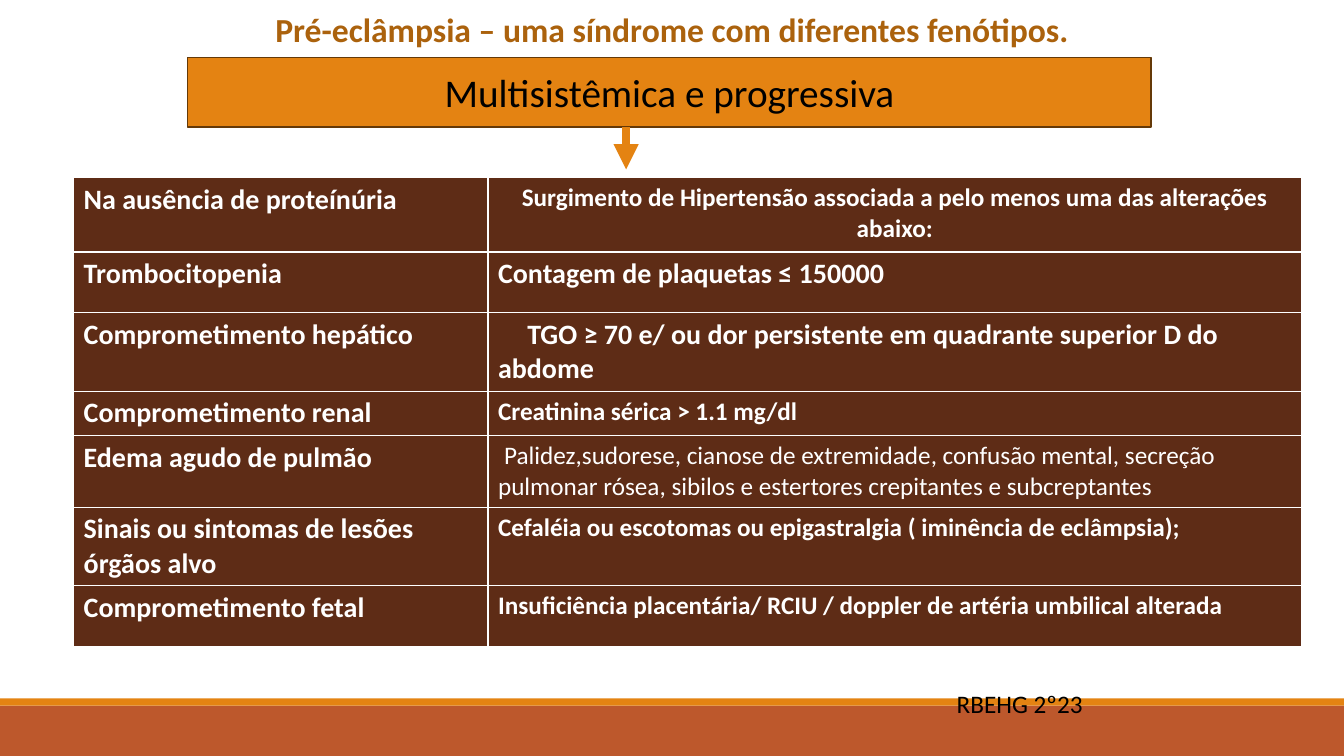
import pptx
import pptx.dml.color
import pptx.enum.shapes
import pptx.enum.text
import pptx.oxml
import pptx.oxml.ns
import pptx.util

ALIGN = pptx.enum.text.PP_ALIGN
PX = 9144  # 100 px to the inch
BLACK, WHITE = "000000", "FFFFFF"
ORANGE, RUST, BROWN = "E48312", "BD582C", "5E2C16"

# Sign, finding, its size, bold, alignment, first-line indent, row height
ROWS = [
    ("Na ausência de proteínúria",
     "Surgimento de Hipertensão associada a pelo menos uma das alterações abaixo:",
     18, True, ALIGN.CENTER, 0, 74),
    ("Trombocitopenia", "Contagem de plaquetas ≤ 150000",
     20, True, ALIGN.LEFT, 0, 60),
    ("Comprometimento hepático",
     "TGO ≥ 70 e/ ou dor persistente em quadrante superior D do abdome",
     20, True, ALIGN.LEFT, 29, 78),
    ("Comprometimento renal", "Creatinina sérica > 1.1 mg/dl",
     18, True, ALIGN.LEFT, 0, 44),
    ("Edema agudo de pulmão",
     "Palidez,sudorese, cianose de extremidade, confusão mental, secreção "
     "pulmonar rósea, sibilos e estertores crepitantes e subcreptantes",
     18, False, ALIGN.LEFT, 6, 71),
    ("Sinais ou sintomas de lesões órgãos alvo",
     "Cefaléia ou escotomas ou epigastralgia ( iminência de eclâmpsia);",
     18, True, ALIGN.LEFT, 0, 78),
    ("Comprometimento fetal",
     "Insuficiência placentária/ RCIU / doppler de artéria umbilical alterada",
     18, True, ALIGN.LEFT, 0, 60),
]


def color(code):
    return pptx.dml.color.RGBColor.from_string(code)


def scale(*sizes):
    return [size * PX for size in sizes]


class Deck:
    """Holds the font and the current slide; lengths are in px."""

    def __init__(self, wide, high, font):
        self.file = pptx.Presentation()
        self.file.slide_width, self.file.slide_height = scale(wide, high)
        self.font = font
        self.slide = self.file.slides.add_slide(self.file.slide_layouts[6])

    def words(self, frame, text, size, ink, bold=False, align=ALIGN.LEFT, indent=0):
        para = frame.paragraphs[0]
        para.text = text
        para.alignment = align
        para.font.name = self.font
        para.font.size = pptx.util.Pt(size)
        para.font.bold = bold
        para.font.color.rgb = color(ink)
        if indent:
            props = para._p.get_or_add_pPr()
            props.set("marL", "0")
            props.set("indent", str(indent * PX))

    def box(self, place, fill, line=None, text="", **style):
        shape = self.slide.shapes.add_shape(
            pptx.enum.shapes.MSO_SHAPE.RECTANGLE, *scale(*place))
        shape.shadow.inherit = False
        shape.fill.solid()
        shape.fill.fore_color.rgb = color(fill)
        if line:
            shape.line.color.rgb = color(line)
            shape.line.width = pptx.util.Pt(1.25)
        else:
            shape.line.fill.background()
        if text:
            shape.text_frame.vertical_anchor = pptx.enum.text.MSO_ANCHOR.MIDDLE
            self.words(shape.text_frame, text, align=ALIGN.CENTER, **style)

    def label(self, place, text, **style):
        frame = self.slide.shapes.add_textbox(*scale(*place)).text_frame
        frame.word_wrap = False
        frame.auto_size = pptx.enum.text.MSO_AUTO_SIZE.SHAPE_TO_FIT_TEXT
        self.words(frame, text, **style)

    def arrow(self, ends, ink, width):
        line = self.slide.shapes.add_connector(
            pptx.enum.shapes.MSO_CONNECTOR.STRAIGHT, *scale(*ends))
        line.line.color.rgb = color(ink)
        line.line.width = pptx.util.Pt(width)
        space = pptx.oxml.ns.nsdecls("a")
        props = line._element.spPr
        props.find(pptx.oxml.ns.qn("a:ln")).append(
            pptx.oxml.parse_xml(f'<a:tailEnd {space} type="triangle"/>'))
        props.append(pptx.oxml.parse_xml(f"<a:effectLst {space}/>"))

    def table(self, left, top, widths, rows):
        high = sum(row[-1] for row in rows)
        grid = self.slide.shapes.add_table(
            len(rows), len(widths), *scale(left, top, sum(widths), high)).table
        grid.horz_banding = False
        for column, width in zip(grid.columns, widths):
            column.width = width * PX
        for line, (sign, finding, size, bold, align, indent, tall) in zip(grid.rows, rows):
            line.height = tall * PX
            for cell in line.cells:
                cell.fill.solid()
                cell.fill.fore_color.rgb = color(BROWN)
            first, second = line.cells
            self.words(first.text_frame, sign, 20, WHITE, True)
            self.words(second.text_frame, finding, size, WHITE, bold, align, indent)


def main():
    deck = Deck(1333, 750, "Calibri")
    deck.box((0, 700, 1333, 50), RUST)
    deck.box((0, 693, 1333, 7), ORANGE)
    deck.box((241, 0, 851, 58), WHITE, WHITE,
             "Pré-eclâmpsia – uma síndrome com diferentes fenótipos.",
             size=24, ink="AB620D", bold=True)
    deck.box((186, 57, 956, 69), ORANGE, "643908",
             "Multisistêmica e progressiva", size=28, ink=BLACK)
    deck.table(73, 176, (411, 807), ROWS)
    deck.arrow((621, 126, 621, 168), ORANGE, 6)
    deck.label((939, 678, 146, 40), "RBEHG 2º23", size=18, ink=BLACK)
    deck.file.save("out.pptx")


if __name__ == "__main__":
    main()
